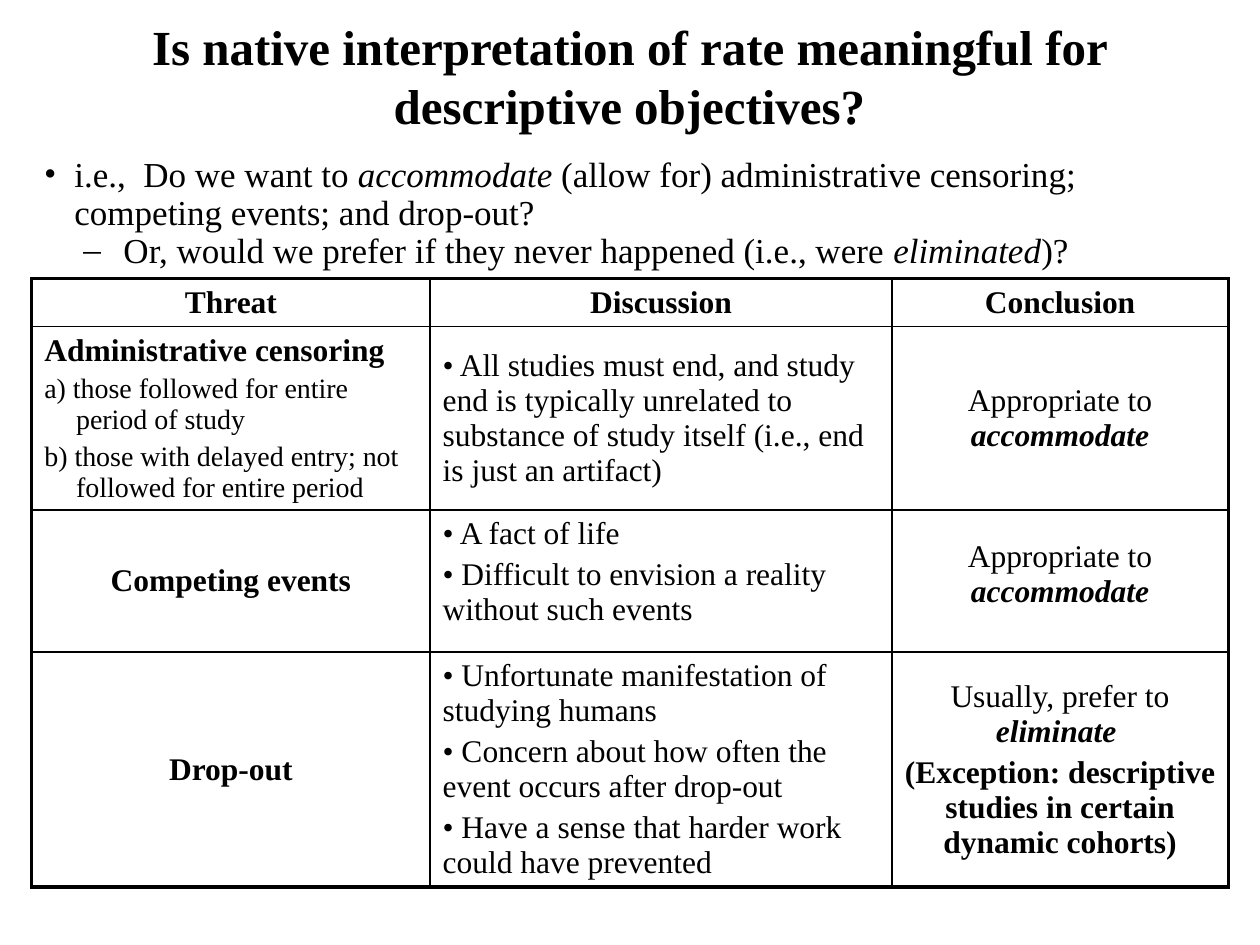
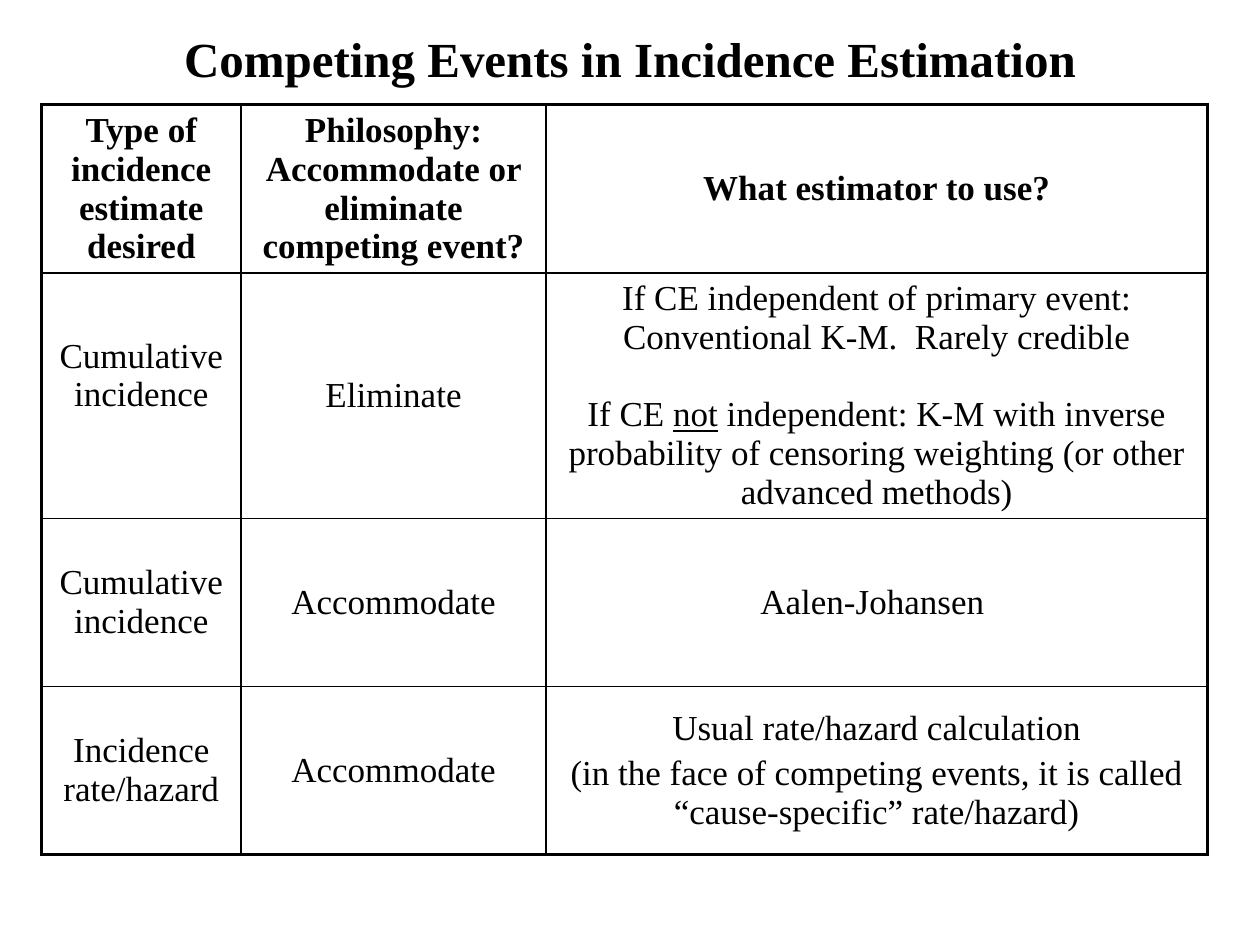
from lxml import etree
from pptx import Presentation
from pptx.dml.color import RGBColor
from pptx.enum.text import MSO_ANCHOR, MSO_AUTO_SIZE, PP_ALIGN
from pptx.oxml.ns import qn
from pptx.util import Cm, Pt

TOP, MIDDLE = MSO_ANCHOR.TOP, MSO_ANCHOR.MIDDLE
LEFT, CENTER = PP_ALIGN.LEFT, PP_ALIGN.CENTER
NO_AUTOFIT = MSO_AUTO_SIZE.NONE
TITLE_ONLY = 5

FONT = "Times New Roman"
INK = "000000"
OUTER_LINE, INNER_LINE = 2.25, 1
TABLE_LEADING = 1.11
TITLE_FORMAT = {"size": 28, "bold": True, "line_spacing": Pt(33.7)}


def colour(hex_value):
    return RGBColor.from_string(hex_value)


# Text helpers: a paragraph is a string or a list of (text, style letters)
def write_paragraph(paragraph, content, size=18, bold=False, bullet=None,
                    margin=0, indent=0, **settings):
    for name, value in settings.items():
        setattr(paragraph, name, value)
    properties = paragraph._p.get_or_add_pPr()
    properties.set("marL", str(Cm(margin)))
    properties.set("indent", str(Cm(indent)))
    if bullet:
        etree.SubElement(properties, qn("a:buFont")).set("typeface", FONT)
        etree.SubElement(properties, qn("a:buChar")).set("char", bullet)
    runs = [(content, "")] if isinstance(content, str) else content
    for text, style in runs:
        run = paragraph.add_run()
        run.text = text
        font_format = {"name": FONT, "size": Pt(size), "bold": bold or "b" in style,
                       "italic": "i" in style, "underline": "u" in style}
        for name, value in font_format.items():
            setattr(run.font, name, value)
        run.font.color.rgb = colour(INK)


def write_paragraphs(frame, paragraphs):
    for index, (content, settings) in enumerate(paragraphs):
        paragraph = frame.add_paragraph() if index else frame.paragraphs[0]
        write_paragraph(paragraph, content, **settings)


def place_title(slide, text, box):
    title = slide.shapes.title
    title.left, title.top, title.width, title.height = map(Cm, box)
    frame = title.text_frame
    frame.auto_size = NO_AUTOFIT
    frame.word_wrap = True
    frame.vertical_anchor = MIDDLE
    write_paragraphs(frame, [(text, {"alignment": CENTER, **TITLE_FORMAT})])


def place_question(slide, paragraphs, box):
    frame = slide.shapes.add_textbox(*map(Cm, box)).text_frame
    frame.word_wrap = True
    common = {"size": 20, "line_spacing": Pt(21.7)}
    write_paragraphs(frame, [(text, {**common, **settings})
                             for text, settings in paragraphs])


# Table helpers
def cell(*paragraphs, anchor=MIDDLE, lift=0, **settings):
    """Describe a cell; lift is extra bottom margin that raises its text."""
    return {"paragraphs": paragraphs, "anchor": anchor, "lift": lift,
            "settings": {"alignment": CENTER, **settings}}


def bullets(*texts, anchor=TOP):
    return cell(*[" " + text for text in texts], anchor=anchor,
                alignment=LEFT, bullet="•")


def draw_borders(table_cell, widths):
    properties = table_cell._tc.get_or_add_tcPr()
    for side, width in zip("LRTB", widths):
        line = etree.SubElement(properties, qn("a:ln" + side), w=str(Pt(width)))
        fill = etree.SubElement(line, qn("a:solidFill"))
        etree.SubElement(fill, qn("a:srgbClr"), val=INK)
    table_cell.fill.background()


def fill_cell(table_cell, content, size):
    table_cell.vertical_anchor = content["anchor"]
    table_cell.margin_bottom = Cm(0.13 + content["lift"])
    paragraphs = []
    for index, item in enumerate(content["paragraphs"]):
        text, own = item if isinstance(item, tuple) else (item, {})
        settings = {"size": size, **content["settings"], **own}
        settings["line_spacing"] = Pt(TABLE_LEADING * settings["size"])
        if index:
            settings.setdefault("space_before", Pt(0.2 * settings["size"]))
        paragraphs.append((text, settings))
    write_paragraphs(table_cell.text_frame, paragraphs)


def place_table(slide, rows, origin, column_widths, row_heights, size):
    left, top = origin
    box = (left, top, sum(column_widths), sum(row_heights))
    table = slide.shapes.add_table(len(rows), len(column_widths), *map(Cm, box)).table
    table.first_row = table.horz_banding = False
    for column, width in zip(table.columns, column_widths):
        column.width = Cm(width)
    for row, height in zip(table.rows, row_heights):
        row.height = Cm(height)
    last_row, last_column = len(rows) - 1, len(column_widths) - 1
    for r, row in enumerate(rows):
        for c, content in enumerate(row):
            at_edge = (c == 0, c == last_column, r == 0, r == last_row)
            draw_borders(table.cell(r, c),
                         [OUTER_LINE if edge else INNER_LINE for edge in at_edge])
            fill_cell(table.cell(r, c), content, size)


def build_rate_slide(slide):
    place_title(slide, "Is native interpretation of rate meaningful for "
                "descriptive objectives?", (0.41, 0.24, 24.56, 2.54))
    place_question(slide, [
        ([("i.e.,  Do we want to ", ""), ("accommodate", "i"),
          (" (allow for) administrative censoring; competing events; "
           "and drop-out?", "")],
         {"bullet": "•", "margin": 0.61, "indent": -0.61}),
        ([("Or, would we prefer if they never happened (i.e., were ", ""),
          ("eliminated", "i"), (")?", "")],
         {"bullet": "–", "margin": 1.6, "indent": -0.81}),
    ], (0.64, 3.03, 24.13, 2.5))

    accommodate = [("Appropriate to ", ""), ("accommodate", "bi")]
    detail = {"size": 16, "bold": False}
    rows = [
        [cell(text, anchor=TOP, bold=True)
         for text in ("Threat", "Discussion", "Conclusion")],
        [cell("Administrative censoring",
              ("a) those followed for entire period of study", detail),
              ("b) those with delayed entry; not followed for entire period", detail),
              anchor=TOP, bold=True, alignment=LEFT, margin=0.64, indent=-0.64),
         bullets("All studies must end, and study end is typically unrelated to "
                 "substance of study itself (i.e., end is just an artifact)",
                 anchor=MIDDLE),
         cell(accommodate)],
        [cell("Competing events", bold=True),
         bullets("A fact of life",
                 "Difficult to envision a reality without such events"),
         cell(accommodate, lift=0.25)],
        [cell("Drop-out", bold=True),
         bullets("Unfortunate manifestation of studying humans",
                 "Concern about how often the event occurs after drop-out",
                 "Have a sense that harder work could have prevented"),
         cell([("Usually, prefer to ", ""), ("eliminate ", "bi")],
              ("(Exception: descriptive studies in certain dynamic cohorts)",
               {"bold": True}))],
    ]
    place_table(slide, rows, (0.64, 5.62), (8.03, 9.31, 6.78),
                (0.95, 3.69, 2.86, 4.72), size=18)


def build_incidence_slide(slide):
    place_title(slide, "Competing Events in Incidence Estimation",
                (0, 0, 25.4, 2.34))
    rows = [
        [cell("Type of incidence estimate desired", bold=True),
         cell("Philosophy:",
              ("Accommodate or eliminate competing event?", {"space_before": Pt(0)}),
              bold=True),
         cell("What estimator to use?", bold=True)],
        [cell("Cumulative incidence", lift=0.8),
         cell("Eliminate"),
         cell("If CE independent of primary event: Conventional K-M.  Rarely credible",
              ([("If CE ", ""), ("not", "u"),
                (" independent: K-M with inverse probability of censoring "
                 "weighting (or other advanced methods)", "")],
               {"space_before": Pt(22)}))],
        [cell("Cumulative incidence"), cell("Accommodate"), cell("Aalen-Johansen ")],
        [cell("Incidence rate/hazard"), cell("Accommodate"),
         cell("Usual rate/hazard calculation",
              "(in the face of competing events, it is called "
              "“cause-specific” rate/hazard)")],
    ]
    place_table(slide, rows, (0.84, 2.11), (4.02, 6.15, 13.33),
                (3.39, 4.94, 3.39, 3.39), size=20)


def main():
    presentation = Presentation()
    presentation.slide_width, presentation.slide_height = Cm(25.4), Cm(19.05)
    for build in (build_rate_slide, build_incidence_slide):
        build(presentation.slides.add_slide(presentation.slide_layouts[TITLE_ONLY]))
    presentation.save("out.pptx")


if __name__ == "__main__":
    main()
